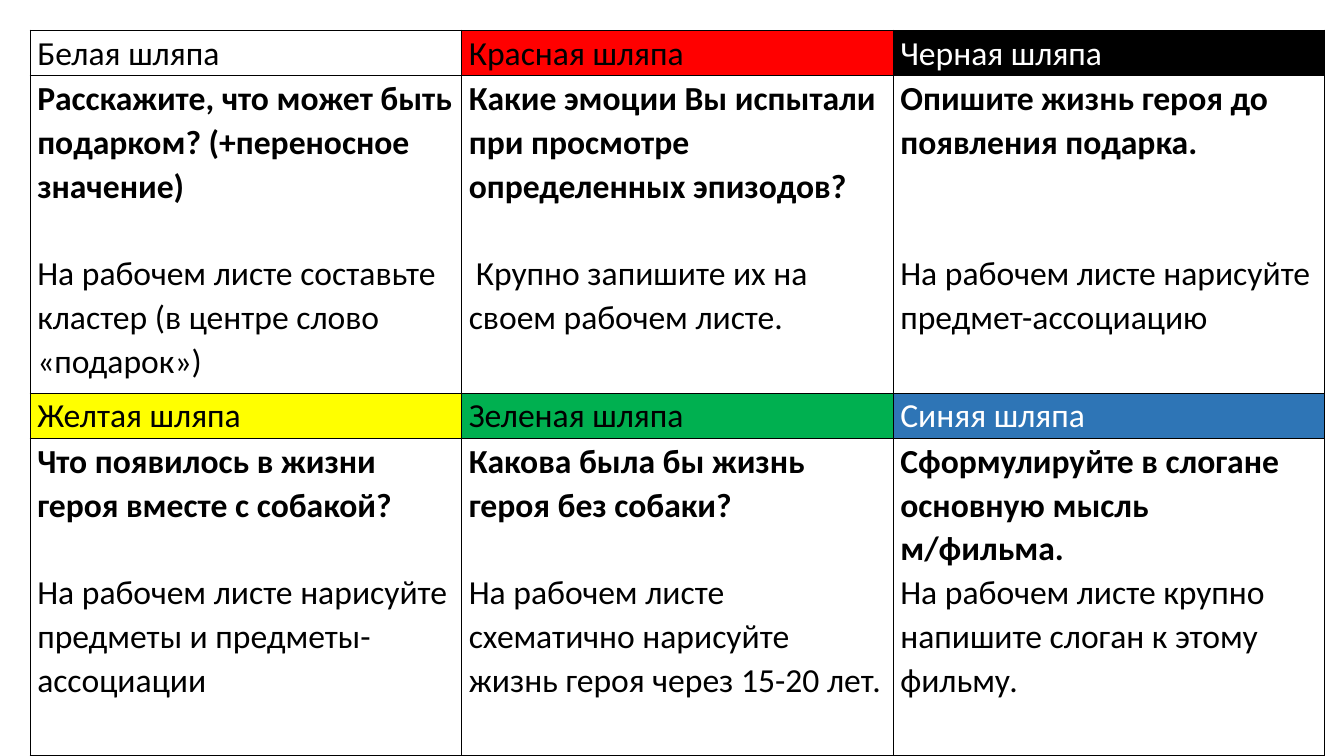
from dataclasses import dataclass

from lxml import etree
from pptx import Presentation
from pptx import table as tb
from pptx import util as u
from pptx.dml.color import RGBColor
from pptx.oxml import ns

PX = u.Inches(1) // 100  # one px is a hundredth of an inch


@dataclass(frozen=True)
class Theme:
    font: str = "Calibri"
    size: float = 24
    lead: float = 1.07
    line: float = 31.4  # height of one text line, points
    ink: str = "000000"
    pale: str = "FFFFFF"
    red: str = "FF0000"
    gold: str = "FFFF00"
    green: str = "00B050"
    blue: str = "2E75B6"
    rule: float = 1


@dataclass(frozen=True)
class Hat:
    name: str
    ask: str
    task: str
    fill: str | None = None
    ink: str = Theme.ink
    gap: int = 1  # free lines between question and task
    dent: int = 0


THEME = Theme()
LEFT, TOP, WIDE = 30, 30, 428
HEAD, BODY, INSET = 45, 315, 7
COLS = 3

HATS = [
    Hat("Белая шляпа",
        "Расскажите, что может быть подарком? (+переносное значение)",
        "На рабочем листе составьте кластер (в центре слово «подарок»)"),
    Hat("Красная шляпа",
        "Какие эмоции Вы испытали при просмотре определенных эпизодов?",
        "Крупно запишите их на своем рабочем листе.",
        fill=THEME.red, dent=7),
    Hat("Черная шляпа",
        "Опишите жизнь героя до появления подарка.",
        "На рабочем листе нарисуйте предмет-ассоциацию",
        fill=THEME.ink, ink=THEME.pale, gap=2),
    Hat("Желтая шляпа",
        "Что появилось в жизни героя вместе с собакой?",
        "На рабочем листе нарисуйте предметы и предметы-ассоциации",
        fill=THEME.gold),
    Hat("Зеленая шляпа",
        "Какова была бы жизнь героя без собаки?",
        "На рабочем листе схематично нарисуйте жизнь героя через 15-20 лет.",
        fill=THEME.green),
    Hat("Синяя шляпа",
        "Сформулируйте в слогане основную мысль м/фильма.",
        "На рабочем листе крупно напишите слоган к этому фильму.",
        fill=THEME.blue, ink=THEME.pale, gap=0),
]


def write(cell: tb._Cell, words: str, *, ink: str = THEME.ink,
          bold: bool = False, gap: int = 0, dent: int = 0) -> None:
    """Fill the cell's first paragraph, or add one when it holds text."""
    frame = cell.text_frame
    para = frame.add_paragraph() if frame.text else frame.paragraphs[0]
    para.line_spacing = THEME.lead
    para.space_before = u.Pt(gap * THEME.line)
    if dent:
        para._p.get_or_add_pPr().set("indent", str(dent * PX))
    run = para.add_run()
    run.text = words
    run.font.name = THEME.font
    run.font.size = u.Pt(THEME.size)
    run.font.bold = bold
    run.font.color.rgb = RGBColor.from_string(ink)


def frame_cell(cell: tb._Cell, fill: str | None = None) -> None:
    """Set margins, four borders and fill."""
    cell.margin_left = cell.margin_right = INSET * PX
    cell.margin_top = cell.margin_bottom = 0
    props = cell._tc.get_or_add_tcPr()
    for side in "LRTB":
        edge = etree.SubElement(props, ns.qn(f"a:ln{side}"),
                                w=str(u.Pt(THEME.rule)))
        solid = etree.SubElement(edge, ns.qn("a:solidFill"))
        etree.SubElement(solid, ns.qn("a:srgbClr"), val=THEME.ink)
    if fill:
        cell.fill.solid()
        cell.fill.fore_color.rgb = RGBColor.from_string(fill)
    else:
        cell.fill.background()


def draw_hat(grid: tb.Table, hat: Hat, row: int, col: int) -> None:
    head, body = grid.cell(row, col), grid.cell(row + 1, col)
    frame_cell(head, hat.fill)
    frame_cell(body)
    write(head, hat.name, ink=hat.ink)
    write(body, hat.ask, bold=True)
    write(body, hat.task, gap=hat.gap, dent=hat.dent)


def main() -> None:
    deck = Presentation()
    deck.slide_width, deck.slide_height = 1333 * PX, 750 * PX
    slide = deck.slides.add_slide(deck.slide_layouts[6])
    highs = [HEAD, BODY] * (len(HATS) // COLS)
    grid = slide.shapes.add_table(
        len(highs), COLS, LEFT * PX, TOP * PX,
        COLS * WIDE * PX, sum(highs) * PX).table
    grid.first_row = grid.horz_banding = False
    for col in grid.columns:
        col.width = WIDE * PX
    for row, high in zip(grid.rows, highs):
        row.height = high * PX
    for i, hat in enumerate(HATS):
        draw_hat(grid, hat, i // COLS * 2, i % COLS)
    deck.save("out.pptx")


if __name__ == "__main__":
    main()
